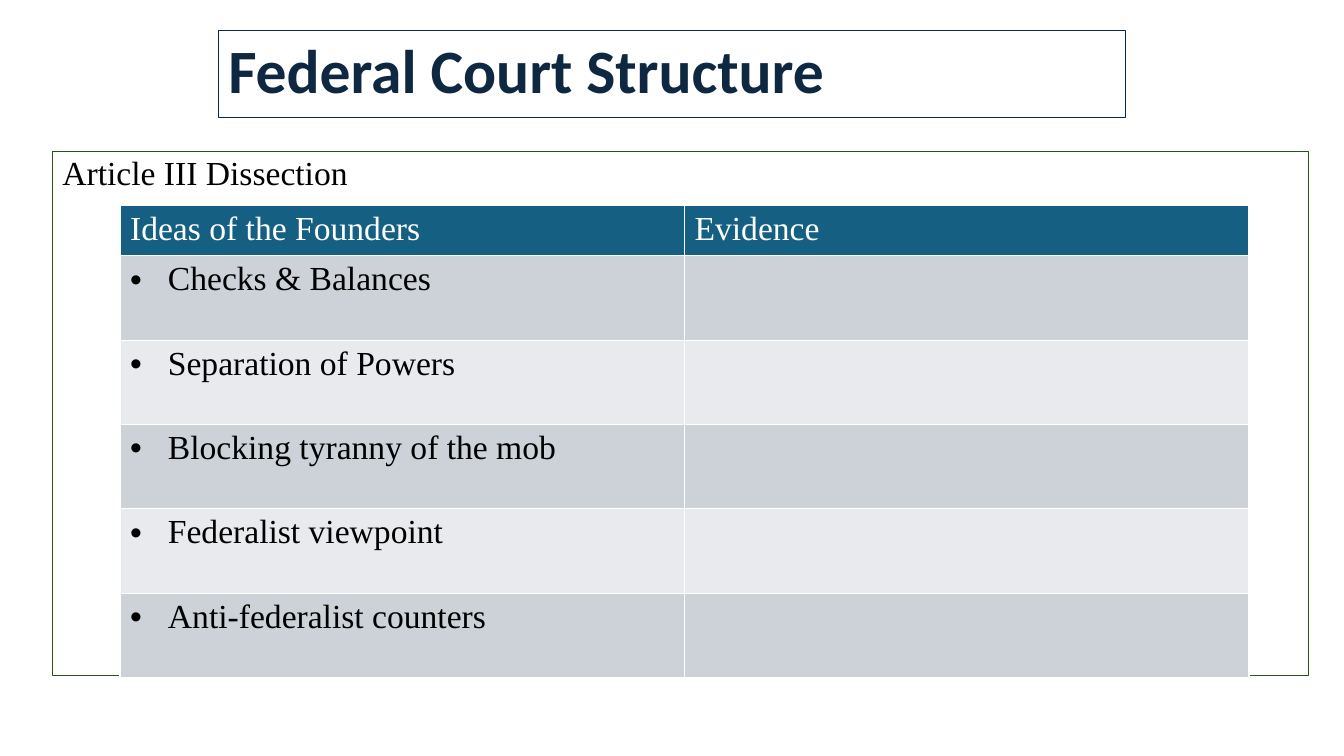
from lxml import etree
from pptx import Presentation
from pptx.dml.color import RGBColor
from pptx.enum import text
from pptx.oxml import ns
from pptx.util import Pt

SERIF = "Times New Roman"
IDEAS = [
    "Checks & Balances",
    "Separation of Powers",
    "Blocking tyranny of the mob",
    "Federalist viewpoint",
    "Anti-federalist counters",
]


def color(hex_value):
    return RGBColor.from_string(hex_value)


def add_run(paragraph, words, font_name, size, hex_value, bold=False):
    run = paragraph.add_run()
    run.text = words
    run.font.name = font_name
    run.font.size = Pt(size)
    run.font.bold = bold
    run.font.color.rgb = color(hex_value)


presentation = Presentation()
presentation.slide_width = Pt(960)
presentation.slide_height = Pt(540)
slide = presentation.slides.add_slide(presentation.slide_layouts[6])

# Framed title and body
frames = [
    ((156, 21.5, 648, 62.5), "0E2841", text.MSO_ANCHOR.MIDDLE,
     ("Federal Court Structure", "Calibri", 44, "0E2841", True)),
    ((37.5, 108.25, 897, 374.25), "275417", text.MSO_ANCHOR.TOP,
     ("Article III Dissection", SERIF, 24, "000000")),
]
for box, line_color, anchor, words in frames:
    shape = slide.shapes.add_textbox(*[Pt(length) for length in box])
    shape.fill.solid()
    shape.fill.fore_color.rgb = color("FFFFFF")
    shape.line.color.rgb = color(line_color)
    shape.line.width = Pt(0.75)
    shape.text_frame.word_wrap = True
    shape.text_frame.vertical_anchor = anchor
    paragraph = shape.text_frame.paragraphs[0]
    paragraph.line_spacing = 0.9
    add_run(paragraph, *words)

# Table of ideas and evidence
HEADER_HEIGHT, ROW_HEIGHT = 33.25, 60.25
table = slide.shapes.add_table(
    len(IDEAS) + 1, 2, Pt(85.75), Pt(146.75), Pt(806.4),
    Pt(HEADER_HEIGHT + ROW_HEIGHT * len(IDEAS))).table
for index, row in enumerate(table.rows):
    row.height = Pt(ROW_HEIGHT if index else HEADER_HEIGHT)
    fill_color = ("CCD2D8" if index % 2 else "E8EAED") if index else "156082"
    for cell in row.cells:
        properties = cell._tc.get_or_add_tcPr()
        for side in ("a:lnL", "a:lnR", "a:lnT", "a:lnB"):
            border = etree.SubElement(properties, ns.qn(side), w=str(Pt(1)))
            fill = etree.SubElement(border, ns.qn("a:solidFill"))
            etree.SubElement(fill, ns.qn("a:srgbClr"), val="FFFFFF")
        cell.fill.solid()
        cell.fill.fore_color.rgb = color(fill_color)

for column, heading in enumerate(["Ideas of the Founders", "Evidence"]):
    paragraph = table.cell(0, column).text_frame.paragraphs[0]
    add_run(paragraph, heading, SERIF, 24, "FFFFFF")

for row_number, idea in enumerate(IDEAS, start=1):
    paragraph = table.cell(row_number, 0).text_frame.paragraphs[0]
    properties = paragraph._p.get_or_add_pPr()
    properties.set("marL", str(Pt(27)))
    properties.set("indent", str(Pt(-27)))
    etree.SubElement(properties, ns.qn("a:buFont"), typeface="Arial")
    etree.SubElement(properties, ns.qn("a:buChar"), char="•")
    add_run(paragraph, idea, SERIF, 24, "000000")

presentation.save("out.pptx")
